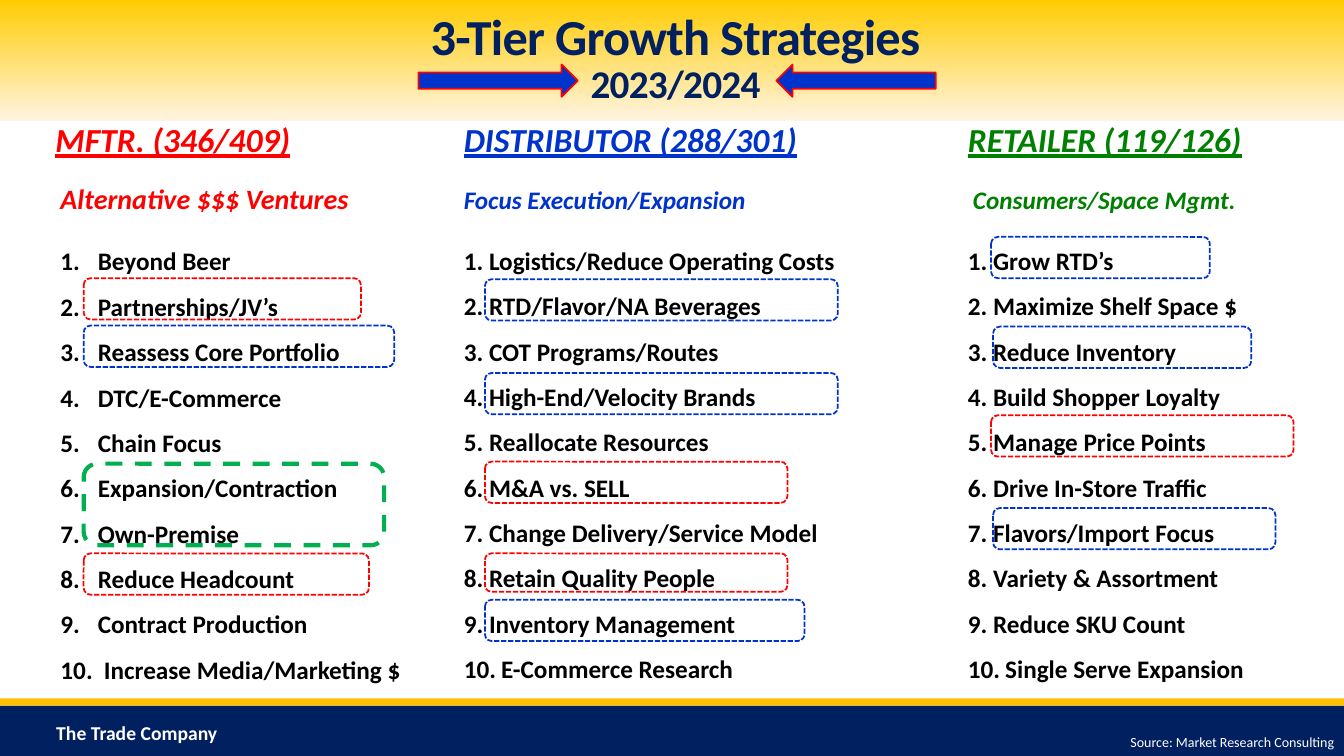
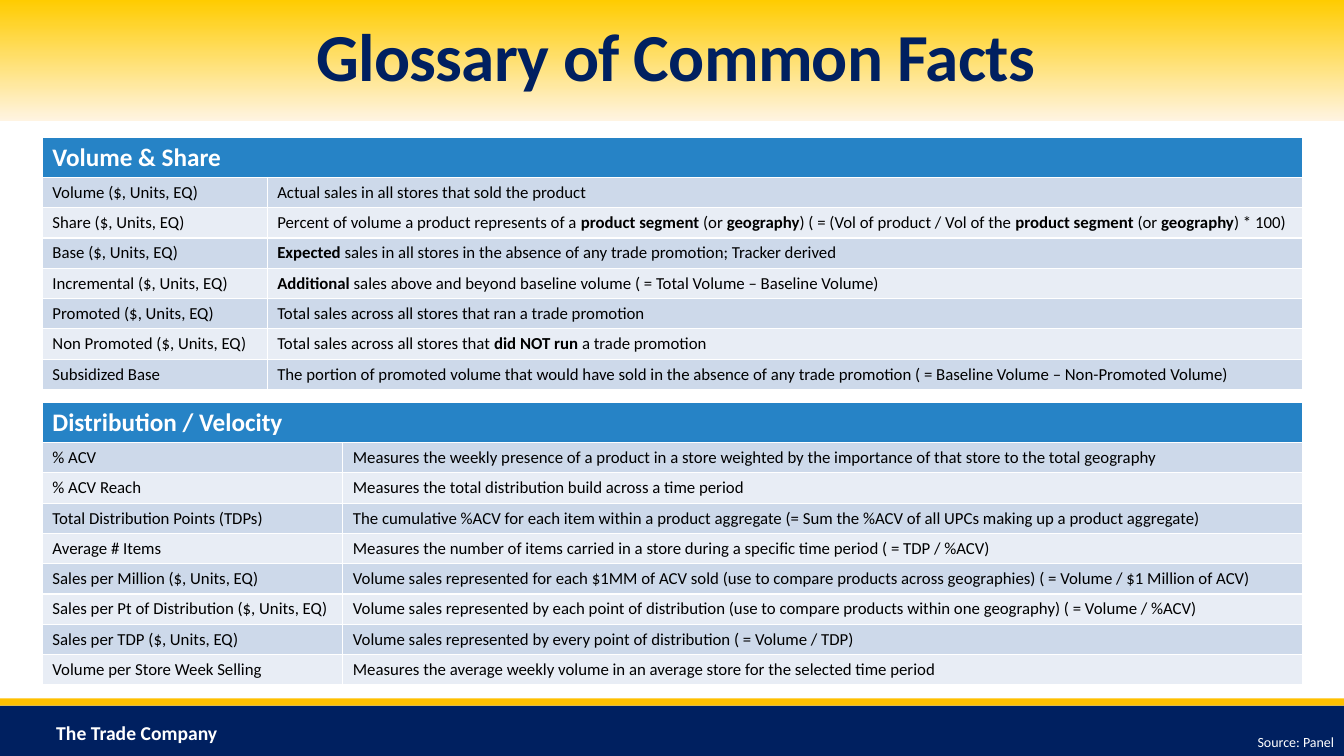
from copy import deepcopy

from lxml import etree
from pptx import Presentation
from pptx.dml.color import RGBColor
from pptx.enum.dml import MSO_LINE
from pptx.enum.shapes import MSO_SHAPE
from pptx.enum.text import MSO_ANCHOR, MSO_AUTO_SIZE, PP_ALIGN
from pptx.oxml.ns import qn
from pptx.util import Inches, Pt

RECT, ROUND = MSO_SHAPE.RECTANGLE, MSO_SHAPE.ROUNDED_RECTANGLE
RIGHT, LEFT = MSO_SHAPE.RIGHT_ARROW, MSO_SHAPE.LEFT_ARROW
DOTS, DASH = MSO_LINE.SQUARE_DOT, MSO_LINE.DASH
TOP, MID = MSO_ANCHOR.TOP, MSO_ANCHOR.MIDDLE

FACE = "Calibri"
NAVY, GOLD, SUN, CREAM = "002060", "FFC000", "FFCC00", "FFF4E2"
RED, BLUE, GREEN, LEAF = "FF0000", "0033CC", "008000", "00B050"
WHITE, BLACK = "FFFFFF", "000000"
HEAD, BANDS = "2683C6", ("CDD9EA", "E8EDF5")
WIDE, HIGH = 13.33, 7.5

# heading, subtitle, subtitle size, colour, left, width,
# subtitle indent, list indent, number width, extra width for two digits, items
TIERS = [
    ("MFTR. (346/409)", "Alternative $$$ Ventures", 20, RED, 0.55, 3.95,
     0.05, 0.05, 0.37, 0.06,
     ["Beyond Beer", "Partnerships/JV’s", "Reassess Core Portfolio",
      "DTC/E-Commerce", "Chain Focus", "Expansion/Contraction", "Own-Premise",
      "Reduce Headcount", "Contract Production", "Increase Media/Marketing $"]),
    ("DISTRIBUTOR (288/301)", "Focus Execution/Expansion", 18, BLUE, 4.6, 4.8,
     0, 0, 0.25, 0.12,
     ["Logistics/Reduce Operating Costs", "RTD/Flavor/NA Beverages",
      "COT Programs/Routes", "High-End/Velocity Brands",
      "Reallocate Resources", "M&A vs. SELL", "Change Delivery/Service Model",
      "Retain Quality People", "Inventory Management", "E-Commerce Research"]),
    ("RETAILER (119/126)", "Consumers/Space Mgmt.", 18, GREEN, 9.6, 3.6,
     0.05, 0, 0.25, 0.12,
     ["Grow RTD’s", "Maximize Shelf Space $", "Reduce Inventory",
      "Build Shopper Loyalty", "Manage Price Points",
      "Drive In-Store Traffic", "Flavors/Import Focus",
      "Variety & Assortment", "Reduce SKU Count", "Single Serve Expansion"]),
]

# left, top, width, height, colour
MARKS = [
    (0.83, 2.76, 2.75, 0.41, RED), (0.83, 3.23, 3.08, 0.41, BLUE),
    (0.83, 5.49, 2.83, 0.41, RED),
    (4.81, 2.77, 3.5, 0.41, BLUE), (4.81, 3.7, 3.5, 0.41, BLUE),
    (4.81, 4.58, 3, 0.41, RED), (4.81, 5.49, 3, 0.38, RED),
    (4.81, 5.95, 3.17, 0.41, BLUE),
    (9.83, 2.35, 2.17, 0.41, BLUE), (9.85, 3.24, 2.56, 0.41, BLUE),
    (9.83, 4.12, 3, 0.41, RED), (9.85, 5.04, 2.8, 0.41, BLUE),
]

# Bold words stand between bars
VOLUME = [
    ("Volume ($, Units, EQ)", "Actual sales in all stores that sold the product"),
    ("Share ($, Units, EQ)",
     "Percent of volume a product represents of a |product segment| (or "
     "|geography|) ( = (Vol of product / Vol of the |product segment| (or "
     "|geography|) * 100)"),
    ("Base ($, Units, EQ)",
     "|Expected| sales in all stores in the absence of any trade promotion; "
     "Tracker derived"),
    ("Incremental ($, Units, EQ)",
     "|Additional| sales above and beyond baseline volume "
     "( = Total Volume – Baseline Volume)"),
    ("Promoted ($, Units, EQ)",
     "Total sales across all stores that ran a trade promotion"),
    ("Non Promoted ($, Units, EQ)",
     "Total sales across all stores that |did NOT run| a trade promotion"),
    ("Subsidized Base",
     "The portion of promoted volume that would have sold in the absence of "
     "any trade promotion ( = Baseline Volume – Non-Promoted Volume)"),
]
REACH = [
    ("% ACV",
     "Measures the weekly presence of a product in a store weighted by the "
     "importance of that store to the total geography"),
    ("% ACV Reach", "Measures the total distribution build across a time period"),
    ("Total Distribution Points (TDPs)",
     "The cumulative %ACV for each item within a product aggregate "
     "(= Sum the %ACV of all UPCs making up a product aggregate)"),
    ("Average # Items",
     "Measures the number of items carried in a store during a specific time "
     "period ( = TDP / %ACV)"),
    ("Sales per Million ($, Units, EQ)",
     "Volume sales represented for each $1MM of ACV sold (use to compare "
     "products across geographies) ( = Volume / $1 Million of ACV)"),
    ("Sales per Pt of Distribution ($, Units, EQ)",
     "Volume sales represented by each point of distribution (use to compare "
     "products within one geography) ( = Volume / %ACV)"),
    ("Sales per TDP ($, Units, EQ)",
     "Volume sales represented by every point of distribution "
     "( = Volume / TDP)"),
    ("Volume per Store Week Selling",
     "Measures the average weekly volume in an average store for the "
     "selected time period"),
]


def rgb(code):
    return RGBColor.from_string(code)


def box(*lens):
    return [Inches(n) for n in lens]


def place(shape, *lens):
    shape.left, shape.top, shape.width, shape.height = box(*lens)


def style(run, size, color, bold=False, slant=False, under=False):
    font = run.font
    font.name, font.size, font.color.rgb = FACE, Pt(size), rgb(color)
    font.bold, font.italic, font.underline = bold, slant, under


def draw(slide, kind, area, fill=None, line=None, width=1.25, dash=None):
    shape = slide.shapes.add_shape(kind, *box(*area))
    shape.shadow.inherit = False
    if fill:
        shape.fill.solid()
        shape.fill.fore_color.rgb = rgb(fill)
    else:
        shape.fill.background()
    if line:
        shape.line.color.rgb = rgb(line)
        shape.line.width = Pt(width)
        if dash:
            shape.line.dash_style = dash
    else:
        shape.line.fill.background()
    return shape


def label(slide, area, text, size, bold=False, align=PP_ALIGN.LEFT, anchor=TOP):
    shape = slide.shapes.add_textbox(*box(*area))
    frame = shape.text_frame
    frame.word_wrap, frame.vertical_anchor = True, anchor
    frame.text = text
    para = frame.paragraphs[0]
    para.alignment = align
    style(para.runs[0], size, WHITE, bold)
    return shape


def dress(master, slide):
    """Draw the bands and the company name, then move them to the master."""
    top = draw(slide, RECT, (0, 0, WIDE, 1.2))
    top.fill.gradient()
    top.fill.gradient_angle = 270
    for stop, color in zip(top.fill.gradient_stops, (SUN, CREAM)):
        stop.color.rgb = rgb(color)
    parts = [
        top,
        draw(slide, RECT, (0, 7, WIDE, 0.5), NAVY),
        draw(slide, RECT, (0, 6.93, WIDE, 0.07), GOLD),
        label(slide, (0.46, 7.13, 2, 0.27), "The Trade Company", 14, True,
              anchor=MID),
    ]
    for at, part in enumerate(parts, 2):
        master.shapes.element.insert(at, part.element)


def frame_up(slide, lines, source):
    """Fill the title, given as (text, size) lines, and the source note."""
    title = slide.shapes.title
    place(title, 1.2, 0.1, 11, 1)
    frame = title.text_frame
    frame.auto_size, frame.vertical_anchor = MSO_AUTO_SIZE.NONE, MID
    frame.text = "\v".join(text for text, _ in lines)
    para = frame.paragraphs[0]
    para.alignment, para.line_spacing = PP_ALIGN.CENTER, 0.85
    for run, (_, size) in zip(para.runs, lines):
        style(run, size, NAVY, True)
        props = run.font._element
        props.set("spc", "-50")
        after = run._r.getnext()
        if after is not None and after.tag == qn("a:br"):
            after.append(deepcopy(props))
    label(slide, (5.15, 7.23, 8.18, 0.27), "Source: " + source, 10,
          align=PP_ALIGN.RIGHT)


def indent(para, left, hang=0):
    """Set the indent; a hanging one is numbered."""
    props = para._p.get_or_add_pPr()
    props.set("marL", str(Inches(left + hang)))
    props.set("indent", str(-Inches(hang)))
    if hang:
        etree.SubElement(props, qn("a:buFont"), typeface="+mj-lt")
        etree.SubElement(props, qn("a:buAutoNum"), type="arabicPeriod")
    else:
        etree.SubElement(props, qn("a:buNone"))
    para.alignment = PP_ALIGN.LEFT
    para.space_before = para.space_after = Pt(0)
    para.line_spacing = 1.0


def column(body, tier):
    head, sub, size, color, left, width, shift, inset, hang, more, items = tier
    place(body, left, 1.18, width, 5.7)
    frame = body.text_frame
    frame.auto_size, frame.vertical_anchor = MSO_AUTO_SIZE.NONE, TOP
    frame.word_wrap = True
    frame.margin_left = frame.margin_right = 0
    frame.margin_top = frame.margin_bottom = 0
    frame.text = "\n".join([head, sub] + items)
    first, second, *rest = frame.paragraphs
    # Heading and subtitle
    indent(first, 0)
    style(first.runs[0], 24, color, True, True, True)
    indent(second, shift)
    second.space_before, second.space_after = Pt(36 - size), Pt(11)
    style(second.runs[0], size, color, True, True)
    # Numbered list
    for num, para in enumerate(rest, 1):
        indent(para, inset, hang + (more if num > 9 else 0))
        para.line_spacing = 1.5
        style(para.runs[0], 18, BLACK, True)


def tiers(slide):
    frame_up(slide, [("3-Tier Growth Strategies", 36), ("2023/2024", 28)],
             "Market Research Consulting")
    bodies = [p for p in slide.placeholders if p.placeholder_format.idx in range(1, 5)]
    for body, tier in zip(bodies, TIERS):
        column(body, tier)
    for spare in bodies[len(TIERS):]:
        spare.element.getparent().remove(spare.element)
    # Dashed marks round the key items
    for *area, color in MARKS:
        draw(slide, ROUND, area, line=color, dash=DOTS)
    draw(slide, ROUND, (0.83, 4.6, 2.98, 0.81), line=LEAF, width=3, dash=DASH)
    # Arrows pointing at the years
    for kind, left in ((RIGHT, 4.15), (LEFT, 7.7)):
        draw(slide, kind, (left, 0.64, 1.58, 0.32), BLUE, RED)


def put(cell, text, fill, size, color, bold=False):
    cell.fill.solid()
    cell.fill.fore_color.rgb = rgb(fill)
    cell.vertical_anchor = MID
    para = cell.text_frame.paragraphs[0]
    for at, part in enumerate(text.split("|")):
        if part:
            run = para.add_run()
            run.text = part
            style(run, size, color, bold or at % 2 == 1)


def terms(slide, left, top, width, first, head, rows):
    """Glossary table: one merged header row over term and meaning."""
    high, pitch = 0.4, 0.3
    area = box(left, top, width, high + pitch * len(rows))
    table = slide.shapes.add_table(len(rows) + 1, 2, *area).table
    for col, size in zip(table.columns, (first, width - first)):
        col.width = Inches(size)
    table.rows[0].height = Inches(high)
    table.cell(0, 0).merge(table.cell(0, 1))
    put(table.cell(0, 0), head, HEAD, 18, WHITE, True)
    for at, pair in enumerate(rows, 1):
        table.rows[at].height = Inches(pitch)
        for col, text in enumerate(pair):
            put(table.cell(at, col), text, BANDS[(at - 1) % 2], 12, BLACK)


def glossary(slide):
    frame_up(slide, [("Glossary of Common Facts", 48)], "Panel")
    terms(slide, 0.42, 1.36, 12.5, 2.23, "Volume & Share", VOLUME)
    terms(slide, 0.42, 3.99, 12.5, 2.98, "Distribution / Velocity", REACH)


def main():
    deck = Presentation()
    deck.slide_width, deck.slide_height = box(WIDE, HIGH)
    lists = deck.slides.add_slide(deck.slide_layouts.get_by_name("Comparison"))
    dress(deck.slide_master, lists)
    tiers(lists)
    glossary(deck.slides.add_slide(deck.slide_layouts.get_by_name("Title Only")))
    deck.save("out.pptx")


if __name__ == "__main__":
    main()
